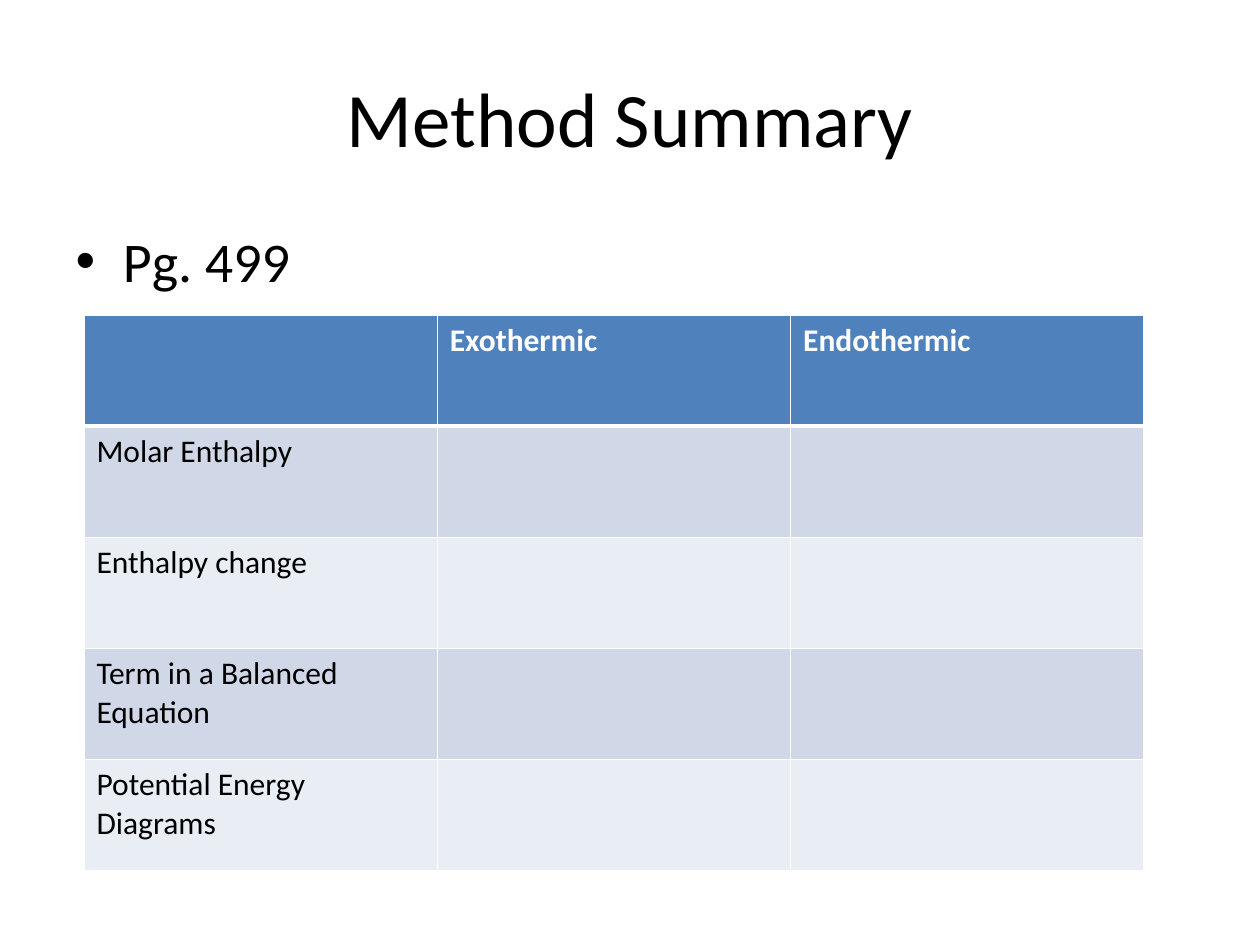
from lxml.etree import SubElement as Sub
from pptx import Presentation
from pptx.dml.color import RGBColor
from pptx.enum.text import MSO_ANCHOR as Anchor, PP_ALIGN as Align
from pptx.oxml.ns import qn
from pptx.util import Emu, Pt

SCALE = 914400 / 126
FONT = "Calibri"
BLACK, WHITE, BLUE = "000000", "FFFFFF", "4F81BD"
BANDS = ("D0D8E8", "E9EDF4")
ROWS = [
    ("", "Exothermic", "Endothermic"),
    ("Molar Enthalpy", "", ""),
    ("Enthalpy change", "", ""),
    ("Term in a Balanced Equation", "", ""),
    ("Potential Energy Diagrams", "", ""),
]


def px(n):
    return Emu(round(n * SCALE))


def color(code):
    return RGBColor.from_string(code)


def write(frame, text, size=18, ink=BLACK, bold=False, align=None):
    para = frame.paragraphs[0]
    para.alignment = align
    run = para.add_run()
    run.text = text
    font = run.font
    font.name, font.size, font.bold = FONT, Pt(size), bold
    font.color.rgb = color(ink)


def place(shape, box):
    shape.left, shape.top, shape.width, shape.height = map(px, box)


def title(slide, box):
    shape = slide.shapes.title
    place(shape, box)
    shape.text_frame.vertical_anchor = Anchor.MIDDLE
    write(shape.text_frame, "Method Summary", size=44, align=Align.CENTER)


def body(slide, box):
    shape = slide.placeholders[1]
    place(shape, box)
    write(shape.text_frame, "Pg. 499", size=32)


def border(cell, **widths):
    """Draw white cell edges; widths are points keyed by side, in L, R, T, B order."""
    props = cell._tc.get_or_add_tcPr()
    for side, width in widths.items():
        line = Sub(props, qn(f"a:ln{side}"), w=str(Pt(width)))
        fill = Sub(line, qn("a:solidFill"))
        Sub(fill, qn("a:srgbClr"), val=WHITE)


def grid(slide, box):
    table = slide.shapes.add_table(len(ROWS), len(ROWS[0]), *map(px, box)).table
    for r, row in enumerate(ROWS):
        head = r == 0
        for c, text in enumerate(row):
            cell = table.cell(r, c)
            border(cell, L=1, R=1, T=3 if r == 1 else 1, B=3 if head else 1)
            cell.fill.solid()
            cell.fill.fore_color.rgb = color(BLUE if head else BANDS[(r - 1) % 2])
            if text:
                write(cell.text_frame, text, ink=WHITE if head else BLACK, bold=head)


def main():
    deck = Presentation()
    deck.slide_width, deck.slide_height = px(1260), px(945)
    slide = deck.slides.add_slide(deck.slide_layouts[1])
    title(slide, (63, 38, 1134, 157))
    body(slide, (63, 220, 1134, 624))
    grid(slide, (84, 315, 1060, 556))
    deck.save("out.pptx")


if __name__ == "__main__":
    main()
